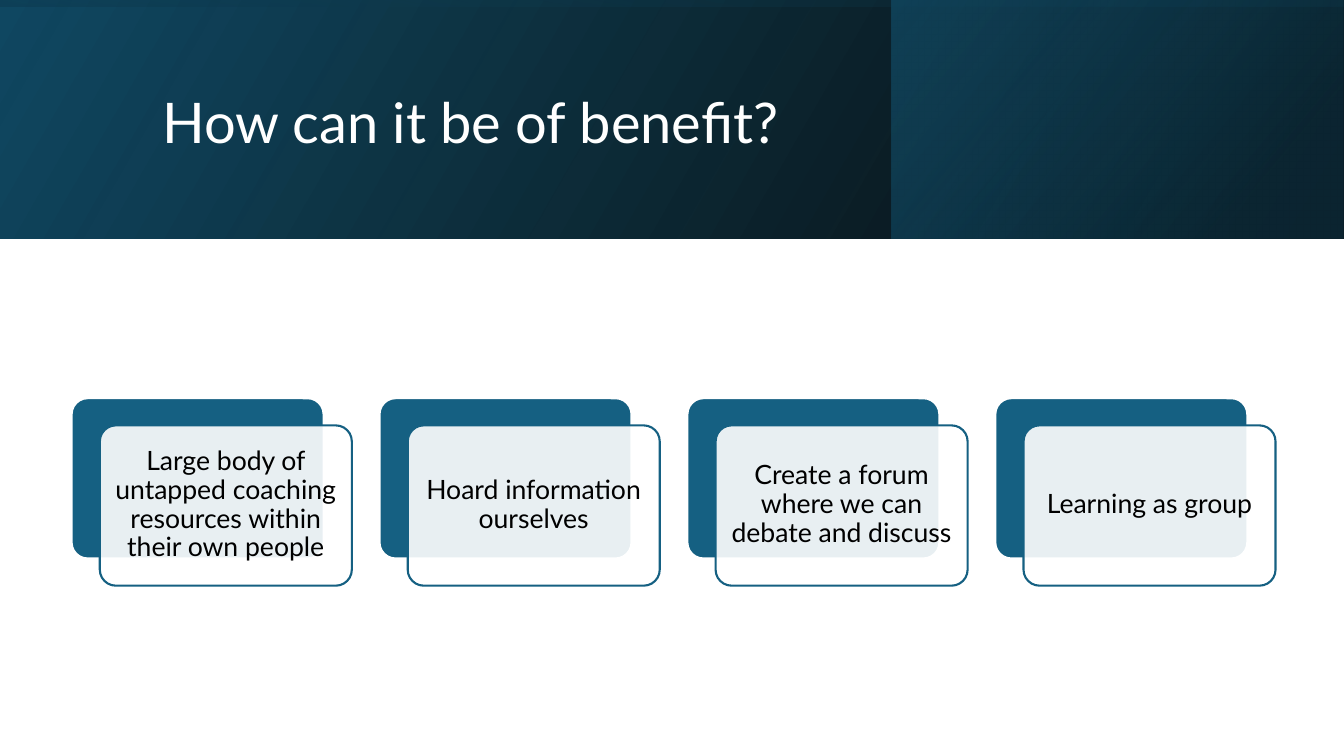
import dataclasses

import pptx
import pptx.dml.color
import pptx.enum.shapes
import pptx.enum.text
import pptx.oxml
import pptx.oxml.ns
import pptx.util
from lxml import etree

WIDTH, HEIGHT = 13.33, 7.5
FONT = "Lato"
TEAL, NAVY, WHITE, BLACK = "156082", "104862", "FFFFFF", "000000"
KIND = pptx.enum.shapes.MSO_SHAPE
ALIGN = pptx.enum.text.PP_ALIGN


@dataclasses.dataclass
class Box:
    """Place and size as percent of the slide's width and height."""
    left: float
    top: float
    width: float
    height: float

    def shift(self, right: float, down: float) -> "Box":
        return dataclasses.replace(self, left=self.left + right, top=self.top + down)

    def span(self) -> tuple:
        return (wide(self.left), high(self.top), wide(self.width), high(self.height))


@dataclasses.dataclass
class Stop:
    place: int
    color: str
    alpha: int


@dataclasses.dataclass
class Band:
    box: Box
    angle: int
    stops: list[Stop]
    turn: int = 0


def wide(share: float) -> int:
    return pptx.util.Inches(WIDTH * share / 100)


def high(share: float) -> int:
    return pptx.util.Inches(HEIGHT * share / 100)


def paint(code: str) -> pptx.dml.color.RGBColor:
    return pptx.dml.color.RGBColor.from_string(code)


def draw_band(shapes, band: Band) -> None:
    shape = shapes.add_shape(KIND.RECTANGLE, *band.box.span())
    shape.shadow.inherit = False
    shape.line.fill.background()
    shape.rotation = band.turn
    props = shape._element.spPr
    props.find(pptx.oxml.ns.qn("a:xfrm")).set("flipH", "1")
    stops = "".join(
        f'<a:gs pos="{stop.place * 1000}"><a:srgbClr val="{stop.color}">'
        f'<a:alpha val="{stop.alpha * 1000}"/></a:srgbClr></a:gs>'
        for stop in band.stops)
    grad = pptx.oxml.parse_xml(
        f'<a:gradFill {pptx.oxml.ns.nsdecls("a")} rotWithShape="1"><a:gsLst>{stops}</a:gsLst>'
        f'<a:lin ang="{band.angle * 60000}" scaled="0"/></a:gradFill>')
    props.find(pptx.oxml.ns.qn("a:prstGeom")).addnext(grad)


def draw_panel(shapes, box: Box, fill: str, edge: str, alpha: int = 100) -> None:
    shape = shapes.add_shape(KIND.ROUNDED_RECTANGLE, *box.span())
    shape.adjustments[0] = 0.1
    shape.shadow.inherit = False
    shape.fill.solid()
    shape.fill.fore_color.rgb = paint(fill)
    shape.line.color.rgb = paint(edge)
    shape.line.width = pptx.util.Pt(1.5)
    if alpha < 100:
        solid = shape._element.spPr.find(pptx.oxml.ns.qn("a:solidFill"))
        etree.SubElement(solid[0], pptx.oxml.ns.qn("a:alpha")).set("val", str(alpha * 1000))


def draw_text(shapes, box: Box, text: str, size: int, color: str,
              align: ALIGN, inset: float) -> None:
    frame = shapes.add_textbox(*box.span()).text_frame
    frame.word_wrap = True
    frame.vertical_anchor = pptx.enum.text.MSO_ANCHOR.MIDDLE
    frame.margin_left = frame.margin_right = pptx.util.Inches(inset)
    frame.margin_top = frame.margin_bottom = pptx.util.Inches(min(inset, 0.08))
    para = frame.paragraphs[0]
    para.alignment = align
    para.line_spacing = 0.9
    run = para.add_run()
    run.text = text
    run.font.name = FONT
    run.font.size = pptx.util.Pt(size)
    run.font.color.rgb = paint(color)


def draw_card(shapes, back: Box, text: str) -> None:
    front = back.shift(2.1, 3.6)
    label = dataclasses.replace(front.shift(0.33, 0.6), width=18.08, height=19.87)
    draw_panel(shapes, back, TEAL, WHITE)
    draw_panel(shapes, front, WHITE, TEAL, 90)
    draw_text(shapes, label, text, 19, BLACK, ALIGN.CENTER, 0.08)


BANDS = [
    Band(Box(0, 0, 100, 31.6), 330, [Stop(0, BLACK, 96), Stop(100, NAVY, 100)]),
    Band(Box(66.3, 0, 33.65, 31.6), 320, [Stop(19, "0B3041", 68), Stop(100, TEAL, 48)]),
    Band(Box(41.1, -73.07, 17.78, 177.73), 350,
         [Stop(23, NAVY, 16), Stop(99, BLACK, 45)], 270),
]
CARDS = [
    "Large body of untapped coaching resources within their own people",
    "Hoard information ourselves",
    "Create a forum where we can debate and discuss",
    "Learning as group",
]
FIRST = Box(5.33, 52.67, 18.75, 21.2)
PITCH = 22.91


def main() -> None:
    deck = pptx.Presentation()
    deck.slide_width, deck.slide_height = wide(100), high(100)
    slide = deck.slides.add_slide(deck.slide_layouts[6])

    # Header
    for band in BANDS:
        draw_band(slide.shapes, band)
    draw_text(slide.shapes, Box(11.33, 5.07, 79.74, 22.93), "How can it be of benefit?",
              40, WHITE, ALIGN.LEFT, 0.1)

    # Row of cards
    group = slide.shapes.add_group_shape()
    for index, text in enumerate(CARDS):
        draw_card(group.shapes, FIRST.shift(index * PITCH, 0), text)

    deck.save("out.pptx")


if __name__ == "__main__":
    main()
